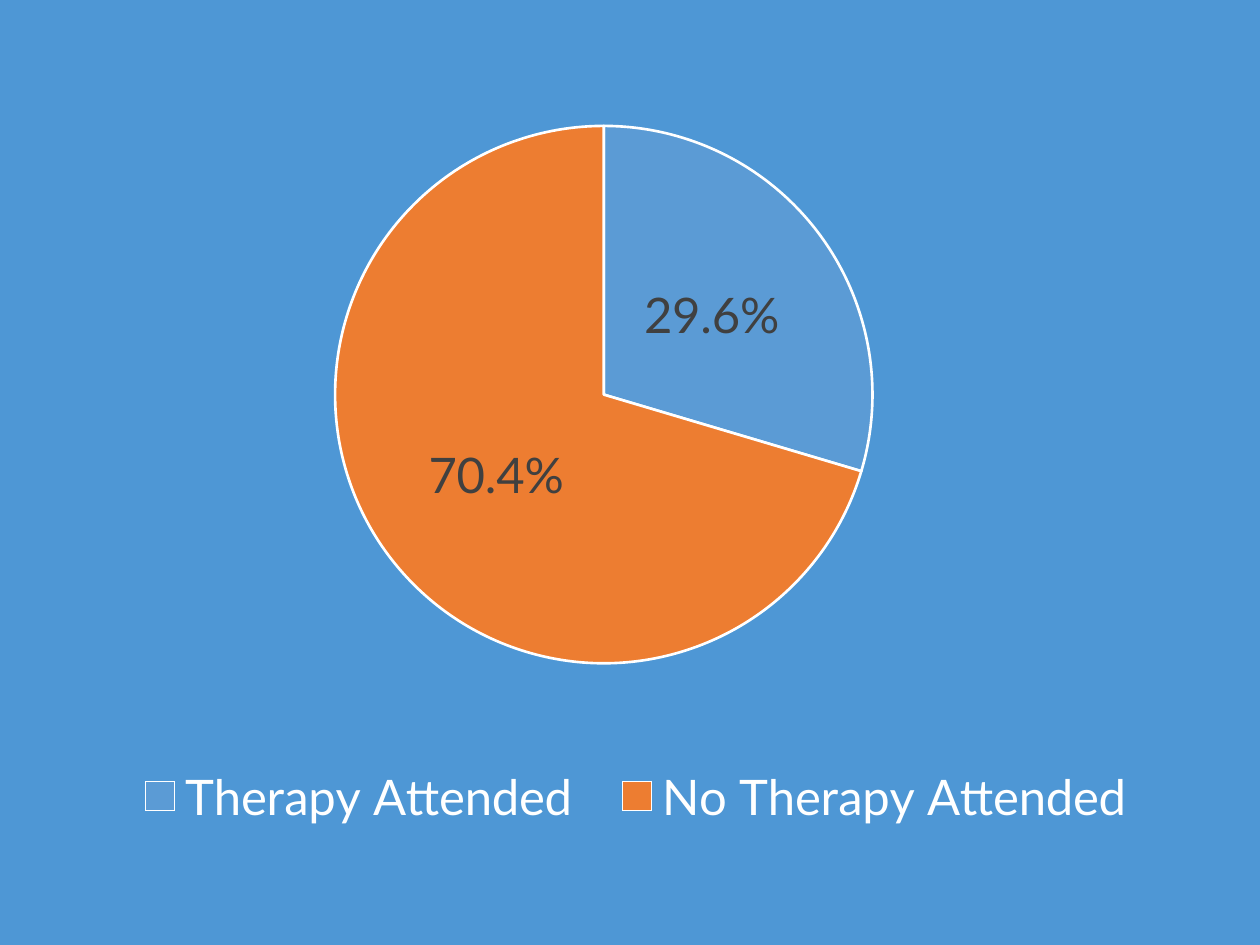
from dataclasses import dataclass

from lxml import etree
from pptx import Presentation
from pptx import util as u
from pptx.chart.chart import Chart
from pptx.chart.data import CategoryChartData
from pptx.dml.color import RGBColor
from pptx.enum import chart as ce
from pptx.oxml import ns


@dataclass(frozen=True)
class Theme:
    font: str = "Lato"
    background: str = "4E97D5"
    outline: str = "FFFFFF"
    legend_text: str = "FFFFFF"
    label_text: str = "404040"
    text_size: int = 28
    outline_width: float = 1.5


@dataclass(frozen=True)
class Slice:
    name: str
    percent: float
    color: str


@dataclass(frozen=True)
class Area:
    """A rectangle given as shares of what holds it."""
    x: float
    y: float
    w: float
    h: float


THEME = Theme()
SLICES = (
    Slice("Therapy Attended", 29.6, "5B9BD5"),
    Slice("No Therapy Attended", 70.4, "ED7D31"),
)
CHART_AREA = Area(0.009, 0.1, 0.991, 0.9)
PIE_AREA = Area(0.259, 0.037, 0.431, 0.632)
LEGEND_AREA = Area(0.08, 0.78, 0.84, 0.09)


def style_font(font, color: str) -> None:
    font.name = THEME.font
    font.size = u.Pt(THEME.text_size)
    font.color.rgb = RGBColor.from_string(color)


def place(parent, area: Area, index: int, inner: bool = False) -> None:
    """Give a chart part a manual layout as its child at the index."""
    for old in parent.findall(ns.qn("c:layout")):
        parent.remove(old)
    layout = etree.Element(ns.qn("c:layout"))
    manual = etree.SubElement(layout, ns.qn("c:manualLayout"))
    settings = [("layoutTarget", "inner")] if inner else []
    settings += [("xMode", "edge"), ("yMode", "edge")]
    settings += [(key, str(getattr(area, key))) for key in "xywh"]
    for tag, value in settings:
        etree.SubElement(manual, ns.qn(f"c:{tag}")).set("val", value)
    parent.insert(index, layout)


def style_slices(chart: Chart) -> None:
    plot = chart.plots[0]
    plot.vary_by_categories = True
    series = plot.series[0]
    for index, part in enumerate(SLICES):
        style = series.points[index].format
        style.fill.solid()
        style.fill.fore_color.rgb = RGBColor.from_string(part.color)
        style.line.color.rgb = RGBColor.from_string(THEME.outline)
        style.line.width = u.Pt(THEME.outline_width)
    labels = series.data_labels
    labels.show_value = True
    labels.number_format = '0.0"%"'
    labels.number_format_is_linked = False
    labels.position = ce.XL_LABEL_POSITION.CENTER
    style_font(labels.font, THEME.label_text)


def add_legend(chart: Chart) -> None:
    chart.has_legend = True
    legend = chart.legend
    legend.position = ce.XL_LEGEND_POSITION.BOTTOM
    legend.include_in_layout = False
    style_font(legend.font, THEME.legend_text)
    place(legend._element, LEGEND_AREA, 1)


def main() -> None:
    deck = Presentation()
    deck.slide_width, deck.slide_height = u.Inches(10), u.Inches(7.5)
    page = deck.slides.add_slide(deck.slide_layouts[6])
    page.background.fill.solid()
    page.background.fill.fore_color.rgb = RGBColor.from_string(THEME.background)

    data = CategoryChartData()
    data.categories = [part.name for part in SLICES]
    data.add_series("Series 1", [part.percent for part in SLICES])
    chart = page.shapes.add_chart(
        ce.XL_CHART_TYPE.PIE,
        int(deck.slide_width * CHART_AREA.x),
        int(deck.slide_height * CHART_AREA.y),
        int(deck.slide_width * CHART_AREA.w),
        int(deck.slide_height * CHART_AREA.h),
        data,
    ).chart
    chart.has_title = False
    chart.font.name = THEME.font
    chart.font.size = u.Pt(10)
    style_slices(chart)
    add_legend(chart)
    place(chart._chartSpace.chart.plotArea, PIE_AREA, 0, inner=True)
    deck.save("out.pptx")


if __name__ == "__main__":
    main()
